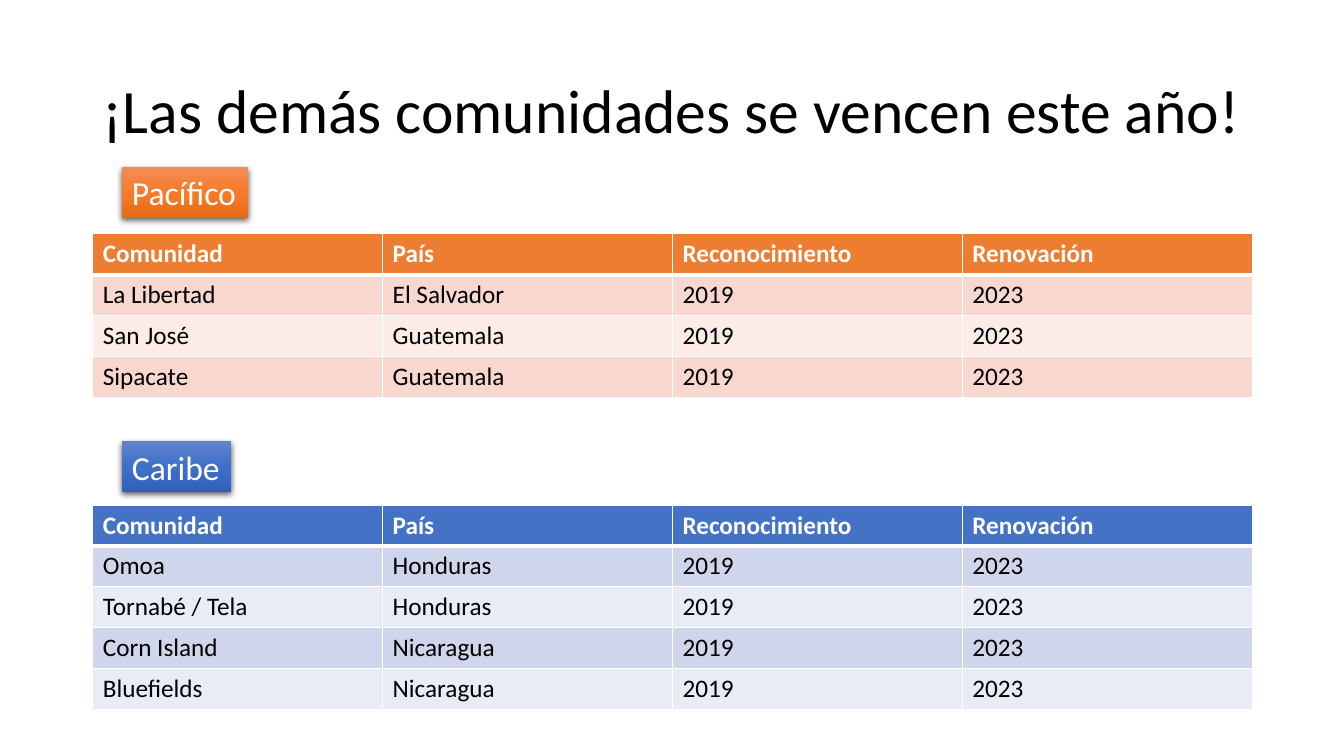
from copy import deepcopy

from pptx import Presentation
from pptx.dml.color import RGBColor
from pptx.enum.shapes import MSO_SHAPE as Shape
from pptx.enum.text import MSO_ANCHOR as Anchor, MSO_AUTO_SIZE as AutoSize, PP_ALIGN as Align
from pptx.oxml import parse_xml
from pptx.oxml.ns import nsdecls, qn
from pptx.util import Inches, Pt

FONT = "Calibri"
WHITE, BLACK = "FFFFFF", "000000"
MARGIN, CONTENT_WIDTH, ROW_HEIGHT = 0.92, 11.5, 0.406
HEADINGS = ("Comunidad", "País", "Reconocimiento", "Renovación")
RECOGNISED, RENEWAL = "2019", "2023"

REGIONS = [
    {
        "name": "Pacífico", "label_top": 1.66, "label_width": 1.25, "table_top": 2.32,
        "gradient": ("F18C57", "F67B28", "E56C19"),
        "header": "ED7D31", "bands": ("F8D7CE", "FCECE8"),
        "communities": [("La Libertad", "El Salvador"), ("San José", "Guatemala"),
                        ("Sipacate", "Guatemala")],
    },
    {
        "name": "Caribe", "label_top": 4.38, "label_width": 1.08, "table_top": 5.01,
        "gradient": ("6183CB", "3E70CA", "3062BB"),
        "header": "4472C4", "bands": ("CFD5EA", "E9EBF5"),
        "communities": [("Omoa", "Honduras"), ("Tornabé / Tela", "Honduras"),
                        ("Corn Island", "Nicaragua"), ("Bluefields", "Nicaragua")],
    },
]


def rgb(hex_colour):
    """Turn a hex string into a colour."""
    return RGBColor.from_string(hex_colour)


def write(frame, text, size, colour, bold=False):
    """Put one left-aligned, formatted line into a text frame."""
    frame.text = text
    paragraph = frame.paragraphs[0]
    paragraph.alignment = Align.LEFT
    font = paragraph.runs[0].font
    font.name, font.size, font.bold = FONT, Pt(size), bold
    font.color.rgb = rgb(colour)


def add_title(slide, text):
    """Add the slide heading."""
    title = slide.shapes.add_textbox(
        Inches(MARGIN), Inches(0.4), Inches(CONTENT_WIDTH), Inches(1.45))
    frame = title.text_frame
    frame.word_wrap = True
    frame.vertical_anchor = Anchor.MIDDLE
    write(frame, text, 44, BLACK)
    frame.paragraphs[0].line_spacing = 0.9


def add_region_label(slide, region):
    """Add the shaded region name above its table."""
    label = slide.shapes.add_shape(
        Shape.RECTANGLE, Inches(1.21), Inches(region["label_top"]),
        Inches(region["label_width"]), Inches(0.5))
    label.line.fill.background()
    label.fill.gradient()
    label.fill.gradient_angle = 270
    properties = label.element.spPr
    stops = properties.find(".//" + qn("a:gsLst"))
    stops.insert(1, deepcopy(stops[0]))
    for index, stop in enumerate(label.fill.gradient_stops):
        stop.position = index / 2
        stop.color.rgb = rgb(region["gradient"][index])
    label.shadow.inherit = False
    properties.find(qn("a:effectLst")).append(parse_xml(
        f'<a:outerShdw {nsdecls("a")} blurRad="{Pt(4.5)}" dist="{Pt(1.5)}" dir="5400000" '
        f'algn="ctr" rotWithShape="0"><a:srgbClr val="{BLACK}">'
        '<a:alpha val="63000"/></a:srgbClr></a:outerShdw>'))
    frame = label.text_frame
    frame.word_wrap = False
    frame.auto_size = AutoSize.SHAPE_TO_FIT_TEXT
    write(frame, region["name"], 24, WHITE)


def set_borders(cell, top, bottom):
    """Draw white cell borders with the given top and bottom widths."""
    properties = cell._tc.get_or_add_tcPr()
    widths = {"lnL": 1, "lnR": 1, "lnT": top, "lnB": bottom}
    for index, (side, width) in enumerate(widths.items()):
        properties.insert(index, parse_xml(
            f'<a:{side} {nsdecls("a")} w="{Pt(width)}"><a:solidFill>'
            f'<a:srgbClr val="{WHITE}"/></a:solidFill></a:{side}>'))


def add_region_table(slide, region):
    """Add the table of communities in a region."""
    rows = [HEADINGS] + [(*community, RECOGNISED, RENEWAL)
                         for community in region["communities"]]
    table = slide.shapes.add_table(
        len(rows), len(HEADINGS), Inches(MARGIN), Inches(region["table_top"]),
        Inches(CONTENT_WIDTH), Inches(ROW_HEIGHT * len(rows))).table
    for row_index, values in enumerate(rows):
        is_header = row_index == 0
        fill = region["header"] if is_header else region["bands"][(row_index - 1) % 2]
        for column_index, value in enumerate(values):
            cell = table.cell(row_index, column_index)
            cell.fill.solid()
            cell.fill.fore_color.rgb = rgb(fill)
            set_borders(cell, 3 if row_index == 1 else 1, 3 if is_header else 1)
            write(cell.text_frame, value, 18, WHITE if is_header else BLACK, is_header)


def main():
    """Build and save the slide."""
    deck = Presentation()
    deck.slide_width, deck.slide_height = Inches(13.33), Inches(7.5)
    slide = deck.slides.add_slide(deck.slide_layouts[6])
    add_title(slide, "¡Las demás comunidades se vencen este año!")
    for region in REGIONS:
        add_region_table(slide, region)
        add_region_label(slide, region)
    deck.save("out.pptx")


if __name__ == "__main__":
    main()
